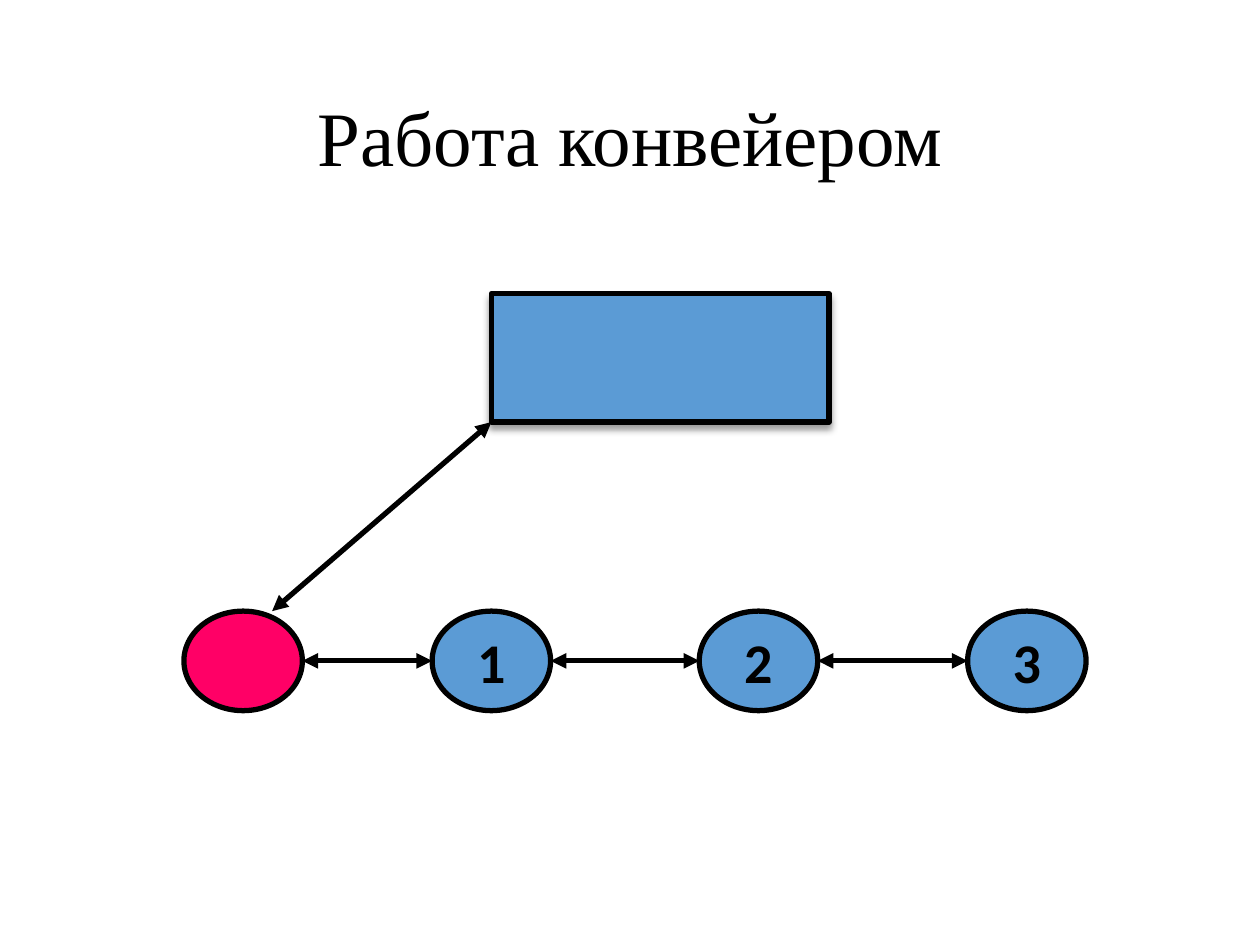
from lxml.etree import SubElement
from pptx import Presentation
from pptx.dml.color import RGBColor
from pptx.enum.shapes import MSO_CONNECTOR, MSO_SHAPE
from pptx.enum.text import MSO_ANCHOR, PP_ALIGN
from pptx.oxml.ns import qn
from pptx.util import Inches, Pt

TITLE = "Работа конвейером"
BLACK, BLUE, PINK = "000000", "5B9BD5", "FF0066"
MANAGER = (3.9, 2.33, 2.68, 1.02)
STAGES = [("", 1.46, PINK), ("1", 3.43, BLUE), ("2", 5.55, BLUE), ("3", 7.68, BLUE)]
STAGE_TOP, STAGE_WIDTH, STAGE_HEIGHT = 4.85, 0.94, 0.79
MANAGER_LINK_END = (2.16, STAGE_TOP)


def color(value):
    return RGBColor.from_string(value)


def set_line(line):
    line.color.rgb = color(BLACK)
    line.width = Pt(3)


def add_text(text_frame, text, font_name, size, bold=False):
    text_frame.vertical_anchor = MSO_ANCHOR.MIDDLE
    paragraph = text_frame.paragraphs[0]
    paragraph.alignment = PP_ALIGN.CENTER
    run = paragraph.add_run()
    run.text = text
    run.font.name = font_name
    run.font.size = Pt(size)
    run.font.bold = bold
    run.font.color.rgb = color(BLACK)
    return paragraph


def add_node(slide, kind, box, fill):
    shape = slide.shapes.add_shape(kind, *map(Inches, box))
    shape.shadow.inherit = False
    shape.fill.solid()
    shape.fill.fore_color.rgb = color(fill)
    set_line(shape.line)
    return shape


def add_shadow(shape):
    effects = shape._element.spPr.find(qn("a:effectLst"))
    shadow = SubElement(effects, qn("a:outerShdw"), blurRad=str(Pt(4)),
                        dist=str(Pt(3)), dir="5400000", rotWithShape="0")
    shade = SubElement(shadow, qn("a:srgbClr"), val=BLACK)
    SubElement(shade, qn("a:alpha"), val="40000")


def add_double_arrow(slide, start, end):
    connector = slide.shapes.add_connector(
        MSO_CONNECTOR.STRAIGHT, *map(Inches, start + end))
    set_line(connector.line)
    properties = connector._element.spPr
    line = properties.find(qn("a:ln"))
    for tag in ("a:headEnd", "a:tailEnd"):
        SubElement(line, qn(tag), type="triangle")
    SubElement(properties, qn("a:effectLst"))


def main():
    presentation = Presentation()
    presentation.slide_width = Inches(10)
    presentation.slide_height = Inches(7.5)
    slide = presentation.slides.add_slide(presentation.slide_layouts[5])

    title = slide.shapes.title
    title.left, title.top = Inches(0.69), Inches(0.4)
    title.width, title.height = Inches(8.62), Inches(1.45)
    add_text(title.text_frame, TITLE, "Times New Roman", 44).line_spacing = 0.9

    add_shadow(add_node(slide, MSO_SHAPE.RECTANGLE, MANAGER, BLUE))

    for label, left, fill in STAGES:
        box = (left, STAGE_TOP, STAGE_WIDTH, STAGE_HEIGHT)
        stage = add_node(slide, MSO_SHAPE.OVAL, box, fill)
        if label:
            stage.text_frame.word_wrap = False
            add_text(stage.text_frame, label, "Calibri", 32, True)

    left, top, _, height = MANAGER
    add_double_arrow(slide, (left, top + height), MANAGER_LINK_END)
    middle = STAGE_TOP + STAGE_HEIGHT / 2
    for (_, before, _), (_, after, _) in zip(STAGES, STAGES[1:]):
        add_double_arrow(slide, (before + STAGE_WIDTH, middle), (after, middle))

    presentation.save("out.pptx")


if __name__ == "__main__":
    main()
